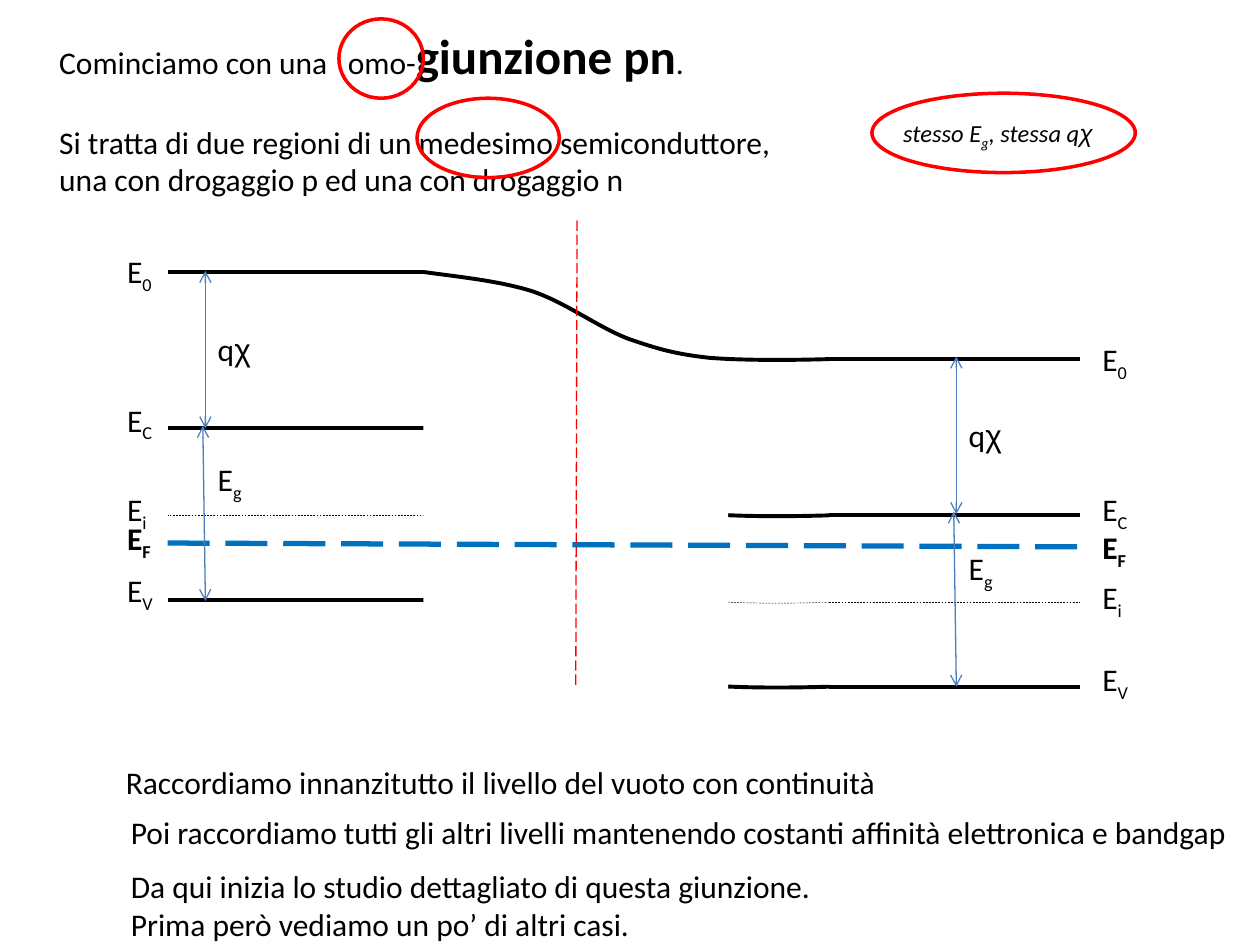
from lxml.etree import SubElement
from pptx import Presentation
from pptx.dml.color import RGBColor
from pptx.enum.dml import MSO_LINE
from pptx.enum.shapes import MSO_CONNECTOR, MSO_SHAPE
from pptx.enum.text import MSO_ANCHOR, MSO_AUTO_SIZE, PP_ALIGN
from pptx.oxml.ns import qn
from pptx.util import Inches, Pt

BLACK = RGBColor(0x00, 0x00, 0x00)
WHITE = RGBColor(0xFF, 0xFF, 0xFF)
RED = RGBColor(0xFF, 0x00, 0x00)
FERMI_BLUE = RGBColor(0x00, 0x70, 0xC0)
ARROW_BLUE = RGBColor(0x4B, 0x7E, 0xBC)

# Horizontal extent of the p side, the bending region and the n side
P_START, P_END, N_START, N_END = 1.33, 3.37, 6.58, 8.57
DROP = 0.69
# Cubic Bézier pieces (x, depth below the p-side level), after the start point
BENDING = [
    [(3.66, 0.04), (3.96, 0.07), (4.22, 0.15)],
    [(4.49, 0.24), (4.75, 0.44), (4.99, 0.53)],
    [(5.22, 0.61), (5.36, 0.65), (5.63, 0.68)],
    [(5.89, 0.7), (6.24, 0.7), (N_START, DROP)],
]

SUB = {"sub": True}
E_GAP = [("E", {}), ("g", SUB)]
AFFINITY = [("q", {}), ("χ", {"font": "Arial"})]


def add_run(p, text, size=18, font="Calibri", bold=False, italic=False, sub=False):
    r = p.add_run()
    r.text = text
    f = r.font
    f.size, f.name, f.bold, f.italic = Pt(size), font, bold, italic
    f.color.rgb = BLACK
    if sub:
        r._r.get_or_add_rPr().set("baseline", "-25000")


def add_text(s, x, y, w, h, *paragraphs, **style):
    """Each paragraph is a list of (text, run style) pairs."""
    tf = s.shapes.add_textbox(Inches(x), Inches(y), Inches(w), Inches(h)).text_frame
    tf.word_wrap = False
    tf.auto_size = MSO_AUTO_SIZE.SHAPE_TO_FIT_TEXT
    for i, runs in enumerate(paragraphs):
        p = tf.add_paragraph() if i else tf.paragraphs[0]
        for text, run_style in runs:
            add_run(p, text, **{**style, **run_style})


def add_level_label(s, x, y, subscript, bold=False):
    add_text(s, x, y, 0.41, 0.4, [("E", {}), (subscript, SUB)], bold=bold)


def style_line(line, color, width, dash=None):
    line.color.rgb = color
    line.width = Pt(width)
    if dash:
        line.dash_style = dash


def add_line(s, start, end, color, width, dash=None, arrows=False):
    ends = [Inches(v) for v in (*start, *end)]
    sp = s.shapes.add_connector(MSO_CONNECTOR.STRAIGHT, *ends)
    style_line(sp.line, color, width, dash)
    if arrows:
        for tag in ("a:headEnd", "a:tailEnd"):
            SubElement(sp.line._get_or_add_ln(), qn(tag)).set("type", "arrow")
    SubElement(sp._element.spPr, qn("a:effectLst"))


def bend_segments(sp):
    """Turn the straight segments of the outline into the Bézier pieces."""
    segments = list(sp._element.iter(qn("a:lnTo")))
    for segment, piece in zip(segments, BENDING):
        curve = SubElement(segment.getparent(), qn("a:cubicBezTo"))
        for x, depth in piece:
            pt = SubElement(curve, qn("a:pt"))
            pt.set("x", str(Inches(x - P_END)))
            pt.set("y", str(Inches(depth)))
        segment.getparent().replace(segment, curve)


def add_band(s, y, width=2.25, dash=None):
    """Energy level at y on the p side, bending down by DROP to the n side."""
    builder = s.shapes.build_freeform(Inches(P_END), Inches(y))
    knots = [piece[-1] for piece in BENDING]
    builder.add_line_segments([(Inches(x), Inches(y + d)) for x, d in knots], close=False)
    sp = builder.convert_to_shape()
    bend_segments(sp)
    sp.shadow.inherit = False
    sp.fill.background()
    style_line(sp.line, BLACK, width, dash)
    add_line(s, (N_START, y + DROP), (N_END, y + DROP), BLACK, width, dash)
    add_line(s, (P_END, y), (P_START, y), BLACK, width, dash)


def add_shape(s, kind, x, y, w, h):
    sp = s.shapes.add_shape(kind, Inches(x), Inches(y), Inches(w), Inches(h))
    sp.shadow.inherit = False
    return sp


def add_blank_region(s):
    """White area where the levels are not yet joined."""
    sp = add_shape(s, MSO_SHAPE.RECTANGLE, 3.36, 3.05, 2.42, 3.35)
    sp.fill.solid()
    sp.fill.fore_color.rgb = WHITE
    sp.line.fill.background()


def add_red_circle(s, x, y, w):
    sp = add_shape(s, MSO_SHAPE.OVAL, x, y, w, 0.63)
    sp.fill.background()
    style_line(sp.line, RED, 2)


def add_intro(s):
    title = s.shapes.title
    title.left, title.top, title.width, title.height = map(Inches, (0.37, 0.15, 9.22, 1.48))
    tf = title.text_frame
    tf.word_wrap = True
    tf.auto_size = MSO_AUTO_SIZE.SHAPE_TO_FIT_TEXT
    tf.vertical_anchor = MSO_ANCHOR.TOP
    paragraphs = [tf.paragraphs[0], tf.add_paragraph(), tf.add_paragraph()]
    for p in paragraphs:
        p.alignment = PP_ALIGN.LEFT
    heading, first, second = paragraphs
    tabs = SubElement(heading._p.get_or_add_pPr(), qn("a:tabLst"))
    tab = SubElement(tabs, qn("a:tab"))
    tab.set("pos", str(Inches(2.29)))
    tab.set("algn", "l")
    add_run(heading, "Cominciamo con una\tomo-")
    add_run(heading, "giunzione pn", size=28, bold=True)
    add_run(heading, ".")
    first.space_before = Pt(22)
    add_run(first, "Si tratta di due regioni di un medesimo semiconduttore,")
    add_run(second, "una con drogaggio p ed una con drogaggio n")


def add_diagram(s):
    for y in (2.16, 3.4):
        add_band(s, y)
    add_band(s, 4.09, 0.25, MSO_LINE.DASH)
    add_band(s, 4.76)
    add_blank_region(s)
    add_line(s, (P_START, 4.31), (N_END, 4.34), FERMI_BLUE, 3, MSO_LINE.LONG_DASH)

    for x, tops in ((8.65, (2.65, 3.84, 5.19, 4.54, 4.14)),
                    (0.91, (1.95, 3.13, 4.48, 3.84, 4.07))):
        for subscript, y in zip("0CViF", tops):
            add_level_label(s, x, y, subscript, bold=subscript == "F")

    add_line(s, (4.58, 1.75), (4.57, 5.45), RED, 0.75, MSO_LINE.LONG_DASH)
    for x, top, gap_label in ((1.63, 2.15, 3.6), (7.59, 2.83, 4.31)):
        add_line(s, (x, top), (x, top + 1.25), ARROW_BLUE, 0.75, arrows=True)
        add_text(s, x, top + 0.42, 0.47, 0.4, AFFINITY)
        add_line(s, (x - 0.02, top + 1.23), (x, top + 2.62), ARROW_BLUE, 0.75, arrows=True)
        add_text(s, x, gap_label, 0.4, 0.4, E_GAP)


def add_comments(s):
    add_text(s, 0.9, 6.01, 6.17, 0.4,
             [("Raccordiamo innanzitutto il livello del vuoto con continuità", {})])
    add_text(s, 0.94, 6.4, 9.02, 0.4,
             [("Poi raccordiamo tutti gli altri livelli mantenendo costanti "
               "affinità elettronica e bandgap", {})])
    add_text(s, 7.07, 0.89, 1.73, 0.34,
             [("stesso E", {}), ("g", SUB), (", stessa q", {}), ("χ", {"font": "Arial"})],
             size=14, italic=True)
    for x, y, w in ((2.69, 0.15, 0.67), (3.31, 0.78, 1.13), (6.92, 0.74, 2.09)):
        add_red_circle(s, x, y, w)
    add_text(s, 0.94, 6.83, 5.67, 0.71,
             [("Da qui inizia lo studio dettagliato di questa giunzione.", {})],
             [("Prima però vediamo un po’ di altri casi.", {})])


def main():
    prs = Presentation()
    prs.slide_width, prs.slide_height = Inches(10), Inches(7.5)
    s = prs.slides.add_slide(prs.slide_layouts[5])
    add_intro(s)
    add_diagram(s)
    add_comments(s)
    prs.save("out.pptx")


if __name__ == "__main__":
    main()
